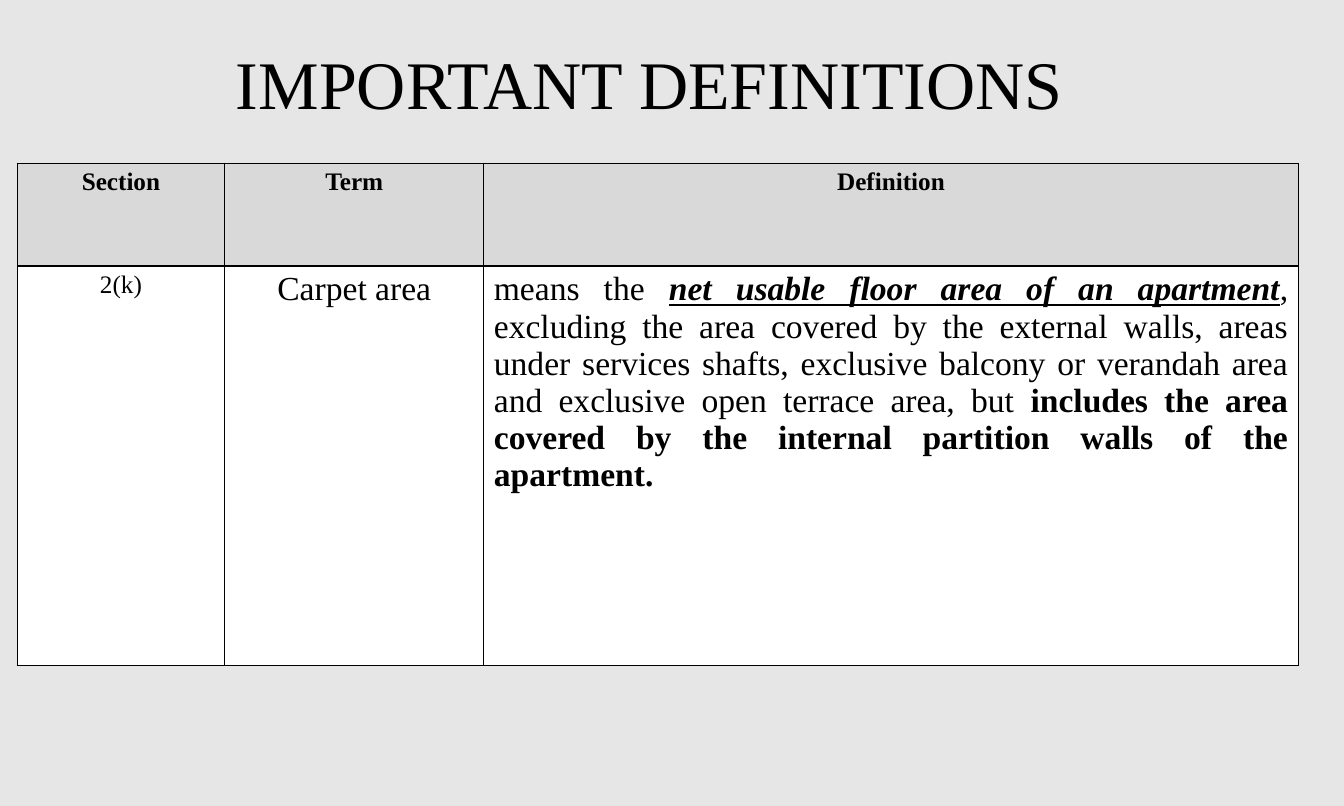
from lxml.etree import SubElement
from pptx import Presentation
from pptx.dml.color import RGBColor
from pptx.enum.text import MSO_ANCHOR, PP_ALIGN
from pptx.oxml.ns import qn
from pptx.util import Inches, Pt

BLACK = RGBColor(0x00, 0x00, 0x00)
WHITE = RGBColor(0xFF, 0xFF, 0xFF)
GRAY = RGBColor(0xD9, 0xD9, 0xD9)
BACK = RGBColor(0xE7, 0xE6, 0xE6)
FACE = "Times New Roman"
MID, FULL = PP_ALIGN.CENTER, PP_ALIGN.JUSTIFY

TITLE = "IMPORTANT DEFINITIONS "
HEADS = ["Section", "Term", "Definition"]
MEANING = [
    ("means the ", {}),
    ("net usable floor area of an apartment",
     {"bold": True, "italic": True, "underline": True}),
    (", excluding the area covered by the external walls, areas under "
     "services shafts, exclusive balcony or verandah area and exclusive "
     "open terrace area, but ", {}),
    ("includes the area covered by the internal partition walls of the "
     "apartment.", {"bold": True}),
]
# Each cell: runs, size, alignment
ROWS = [
    [([(head, {"bold": True})], 18, MID) for head in HEADS],
    [([("2(k)", {})], 18, MID), ([("Carpet area", {})], 24, MID),
     (MEANING, 24, FULL)],
]
FILLS = [GRAY, WHITE]
WIDTHS = [2.06, 2.57, 8.08]
HEIGHTS = [1.02, 3.97]
LEFT, WIDTH = 0.17, sum(WIDTHS)


def write(frame, runs, size, align):
    para = frame.paragraphs[0]
    para.alignment = align
    for text, style in runs:
        run = para.add_run()
        run.text = text
        look = {"name": FACE, "size": Pt(size), "bold": False, **style}
        for key, value in look.items():
            setattr(run.font, key, value)
        run.font.color.rgb = BLACK
    return para


def outline(cell):
    """Draw a thin black border on all four sides, ahead of the fill."""
    props = cell._tc.get_or_add_tcPr()
    for side in ("a:lnL", "a:lnR", "a:lnT", "a:lnB"):
        line = SubElement(props, qn(side), w=str(Pt(1)))
        fill = SubElement(line, qn("a:solidFill"))
        SubElement(fill, qn("a:srgbClr"), val=str(BLACK))


deck = Presentation()
deck.slide_width, deck.slide_height = Inches(40 / 3), Inches(8)
slide = deck.slides.add_slide(deck.slide_layouts[6])
slide.background.fill.solid()
slide.background.fill.fore_color.rgb = BACK

title = slide.shapes.add_textbox(
    Inches(LEFT), Inches(0.51), Inches(WIDTH), Inches(0.77)).text_frame
title.word_wrap = True
title.vertical_anchor = MSO_ANCHOR.BOTTOM
write(title, [(TITLE, {})], 48.6, MID).line_spacing = 0.9

table = slide.shapes.add_table(
    len(ROWS), len(WIDTHS), Inches(LEFT), Inches(1.62),
    Inches(WIDTH), Inches(sum(HEIGHTS))).table
for col, width in zip(table.columns, WIDTHS):
    col.width = Inches(width)
for row, height, shade, items in zip(table.rows, HEIGHTS, FILLS, ROWS):
    row.height = Inches(height)
    for cell, item in zip(row.cells, items):
        outline(cell)
        cell.fill.solid()
        cell.fill.fore_color.rgb = shade
        write(cell.text_frame, *item)

deck.save("out.pptx")
